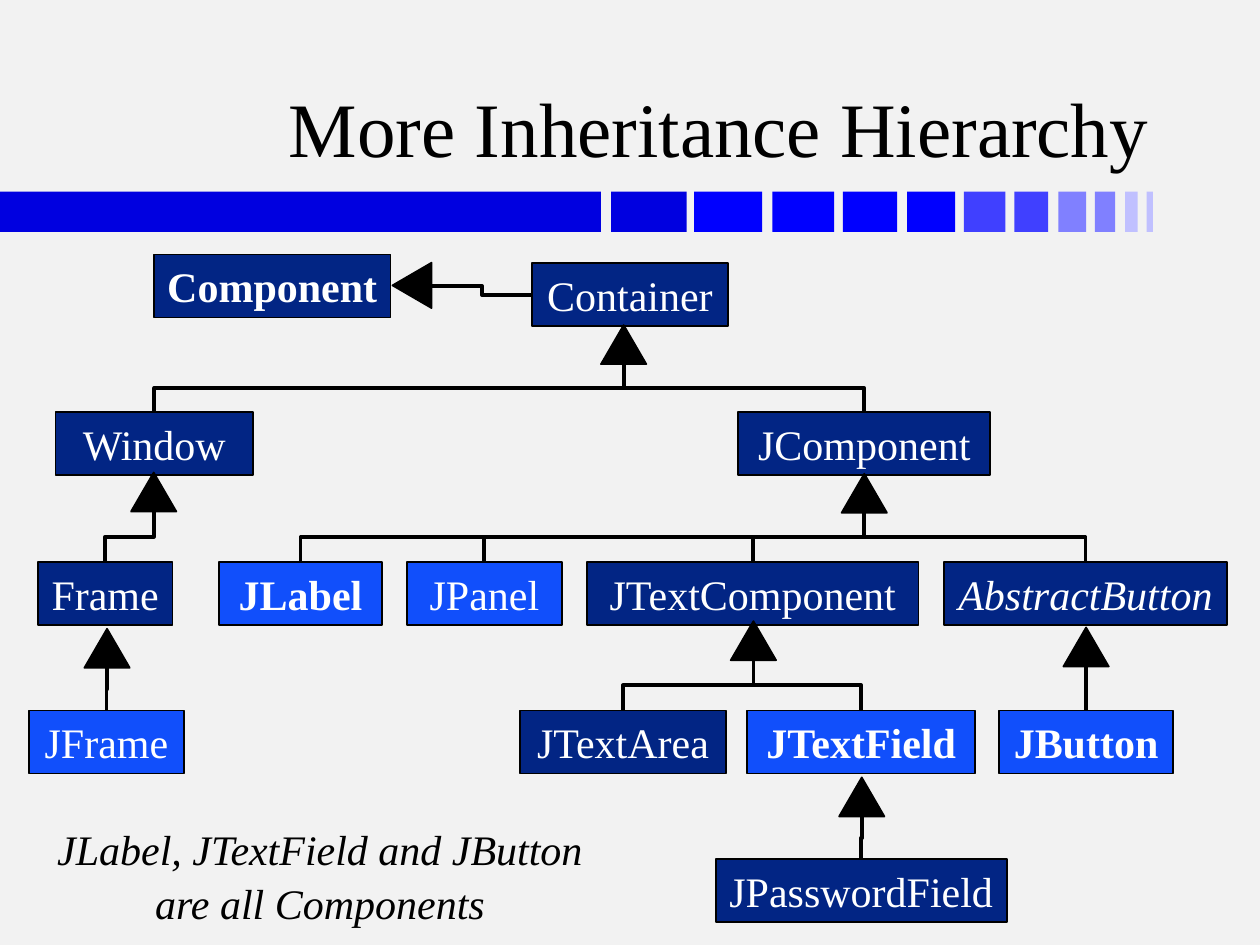
"""Build the class inheritance slide."""
from lxml import etree
from pptx import Presentation
from pptx import util as u
from pptx.dml import color as col
from pptx.enum import shapes as sh, text as tx
from pptx.oxml import ns

HUES = {
    "page": "F2F2F2", "ink": "000000", "text": "FFFFFF",
    "navy": "022584", "blue": "114FFB",
    "bar1": "0000E0", "bar2": "0000FF", "bar3": "4040FF",
    "bar4": "8080FF", "bar5": "C0C0FF",
}
BARS = [
    (0, 4.77, "bar1"), (4.85, 0.6, "bar1"),
    (5.51, 0.54, "bar2"), (6.13, 0.49, "bar2"),
    (6.69, 0.43, "bar2"), (7.2, 0.38, "bar2"),
    (7.65, 0.33, "bar3"), (8.05, 0.27, "bar3"),
    (8.4, 0.22, "bar4"), (8.69, 0.16, "bar4"),
    (8.93, 0.1, "bar5"), (9.1, 0.05, "bar5"),
]
BOLD, ITAL = {"bold": True}, {"italic": True}
NODES = {
    "Component": (1.22, 2.02, 1.88, "navy", BOLD),
    "Container": (4.22, 2.09, 1.56, "navy", {}),
    "Window": (0.44, 3.27, 1.57, "navy", {}),
    "JComponent": (5.86, 3.27, 2, "navy", {}),
    "Frame": (0.3, 4.46, 1.07, "navy", {}),
    "JLabel": (1.74, 4.46, 1.29, "blue", BOLD),
    "JPanel": (3.23, 4.46, 1.23, "blue", {}),
    "JTextComponent": (4.66, 4.46, 2.63, "navy", {}),
    "AbstractButton": (7.49, 4.46, 2.25, "navy", ITAL),
    "JFrame": (0.23, 5.64, 1.23, "blue", {}),
    "JTextArea": (4.13, 5.64, 1.63, "navy", {}),
    "JTextField": (5.93, 5.64, 1.81, "blue", BOLD),
    "JButton": (7.93, 5.64, 1.38, "blue", BOLD),
    "JPasswordField": (5.68, 6.82, 2.31, "navy", {}),
}
TREES = [
    (4.95, 2.58, ["Window", "JComponent"]),
    (1.22, 3.75, ["Frame"]),
    (6.86, 3.76, ["JLabel", "JPanel", "JTextComponent", "AbstractButton"]),
    (0.85, 4.99, ["JFrame"]),
    (5.98, 4.93, ["JTextArea", "JTextField"]),
    (8.62, 4.98, ["JButton"]),
    (6.84, 6.17, ["JPasswordField"]),
]
NOTE = ["JLabel, JTextField and JButton", "are all Components"]
HIGH, WIDE, TALL = 0.5, 0.36, 0.31


def rgb(name):
    """Return the named colour."""
    return col.RGBColor.from_string(HUES[name])


def apply(obj, vals):
    """Set each value as an attribute of the object."""
    for key, val in vals.items():
        setattr(obj, key, val)


def write(frame, lines, hue, look, para, body):
    """Fill a text frame with formatted paragraphs."""
    apply(frame, {"auto_size": tx.MSO_AUTO_SIZE.NONE, **body})
    frame.text = "\n".join(lines)
    for item in frame.paragraphs:
        apply(item, para)
        font = item.runs[0].font
        apply(font, {"name": "Times New Roman", "size": u.Pt(24), **look})
        font.color.rgb = rgb(hue)


def draw(slide, kind, at, hue, edge=True):
    """Add a filled preset shape, with a thin black edge if asked."""
    shape = slide.shapes.add_shape(kind, *map(u.Inches, at))
    shape.shadow.inherit = False
    shape.fill.solid()
    shape.fill.fore_color.rgb = rgb(hue)
    if edge:
        shape.line.color.rgb = rgb("ink")
        shape.line.width = u.Pt(1)
    else:
        shape.line.fill.background()
    return shape


def node(slide, name):
    """Add one class box."""
    left, top, wide, hue, look = NODES[name]
    shape = draw(slide, sh.MSO_SHAPE.RECTANGLE, (left, top, wide, HIGH), hue)
    write(shape.text_frame, [name], "text", look,
          {"alignment": tx.PP_ALIGN.CENTER},
          {"word_wrap": False, "vertical_anchor": tx.MSO_ANCHOR.MIDDLE})


def link(slide, start, end, turn=0):
    """Add a black elbow connector, turned by whole degrees."""
    ends = map(u.Inches, (*start, *end))
    line = slide.shapes.add_connector(sh.MSO_CONNECTOR.ELBOW, *ends)
    line.line.color.rgb = rgb("ink")
    line.line.width = u.Pt(2.25)
    props = line._element.spPr
    etree.SubElement(props, ns.qn("a:effectLst"))
    if turn:
        props.find(ns.qn("a:xfrm")).set("rot", str(turn * 60000))


def rise(slide, start, end):
    """Link upward, leaving and arriving vertically."""
    (x, y), (px, py) = start, end
    midx, midy = (x + px) / 2, (y + py) / 2
    side = 1 if x <= px else -1
    dx, dy = side * (y - py) / 2, abs(x - px) / 2
    link(slide, (midx + dx, midy + dy), (midx - dx, midy - dy),
         90 if side > 0 else 270)


def head(slide, x, top, turn=0):
    """Add a solid triangle centred on x."""
    at = (x - WIDE / 2, top, WIDE, TALL)
    shape = draw(slide, sh.MSO_SHAPE.ISOSCELES_TRIANGLE, at, "ink")
    shape.rotation = turn


def tree(slide, x, tip, kids):
    """Join subclasses to the arrowhead below their parent."""
    for kid in kids:
        left, top, wide = NODES[kid][:3]
        rise(slide, (left + wide / 2, top), (x, tip + TALL))
    head(slide, x, tip)


def title(slide):
    """Place and fill the title."""
    shape = slide.shapes.title
    spot = dict(left=0.74, top=0.19, width=8.48, height=1.23)
    apply(shape, {key: u.Inches(val) for key, val in spot.items()})
    write(shape.text_frame, ["More Inheritance Hierarchy"], "ink",
          {"size": u.Pt(44)}, {"alignment": tx.PP_ALIGN.RIGHT},
          {"word_wrap": True, "vertical_anchor": tx.MSO_ANCHOR.BOTTOM})


def note(slide):
    """Add the remark at the lower left."""
    box = slide.shapes.add_textbox(*map(u.Inches, (0.2, 6.49, 4.68, 0.91)))
    write(box.text_frame, NOTE, "ink", ITAL,
          {"alignment": tx.PP_ALIGN.CENTER, "space_before": u.Pt(1.5)},
          {"word_wrap": True})


def main():
    """Build and save the slide."""
    deck = Presentation()
    apply(deck, {"slide_width": u.Inches(10), "slide_height": u.Inches(7.5)})
    slide = deck.slides.add_slide(deck.slide_layouts[5])
    slide.background.fill.solid()
    slide.background.fill.fore_color.rgb = rgb("page")
    for left, wide, hue in BARS:
        draw(slide, sh.MSO_SHAPE.RECTANGLE, (left, 1.52, wide, 0.32), hue, False)
    title(slide)
    for name in NODES:
        node(slide, name)
    for item in TREES:
        tree(slide, *item)
    link(slide, (4.22, 2.34), (3.43, 2.27))
    head(slide, 3.27, 2.11, 270)
    note(slide)
    deck.save("out.pptx")


if __name__ == "__main__":
    main()
